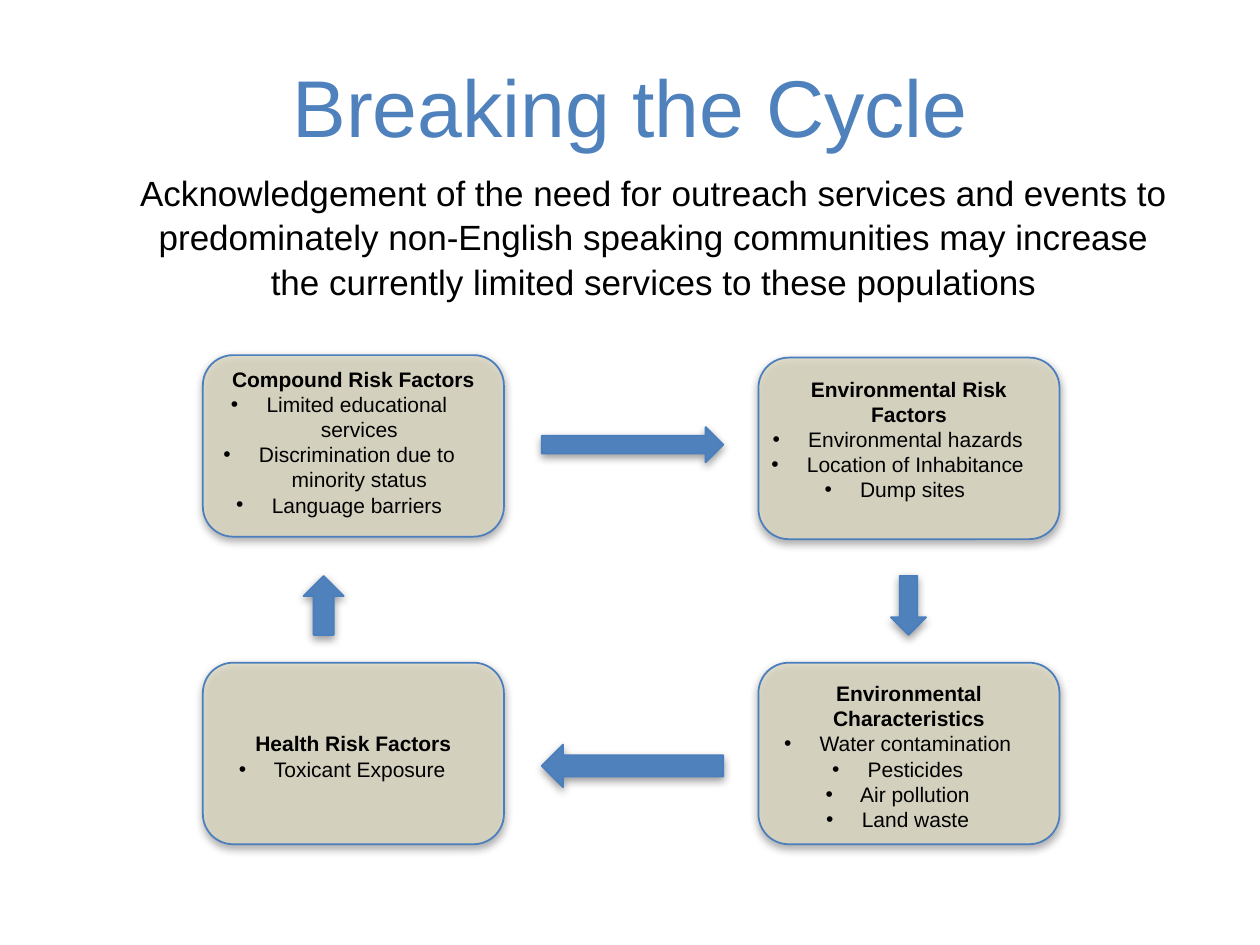
from lxml.etree import SubElement
from pptx import Presentation
from pptx.dml.color import RGBColor
from pptx.enum.shapes import MSO_SHAPE as Preset
from pptx.enum.text import MSO_ANCHOR as Anchor, PP_ALIGN as Align
from pptx.oxml.ns import qn
from pptx.util import Cm, Pt

color = RGBColor.from_string
BLUE, EDGE, SAND, BLACK = "4F81BD", "4B7EBC", "DDD9C3", "000000"


def add_text(left, top, width, height, anchor, lines):
    """Each line is (text, font values, kind); kind is plain, bullet or hanging."""
    frame = slide.shapes.add_textbox(Cm(left), Cm(top), Cm(width), Cm(height)).text_frame
    frame.word_wrap = True
    frame.vertical_anchor = anchor
    for index, (text, size, hue, bold, kind) in enumerate(lines):
        paragraph = frame.add_paragraph() if index else frame.paragraphs[0]
        paragraph.alignment = Align.CENTER
        run = paragraph.add_run()
        run.text = text
        run.font.color.rgb = color(hue)
        for name, value in {"name": "Arial", "size": Pt(size), "bold": bold}.items():
            setattr(run.font, name, value)
        properties = paragraph._p.get_or_add_pPr()
        if kind == "bullet":
            SubElement(properties, qn("a:buFont"), typeface="Arial")
            SubElement(properties, qn("a:buChar"), char="•")
        elif kind == "hanging":
            properties.set("marL", str(Cm(0.24)))
    return frame


def add_block(preset, left, top, width, height, fill, opacity=100):
    """Filled preset shape with a soft shadow straight below it."""
    shape = slide.shapes.add_shape(preset, Cm(left), Cm(top), Cm(width), Cm(height))
    shape.fill.solid()
    shape.fill.fore_color.rgb = color(fill)
    if opacity < 100:
        fill_color = shape._element.spPr.find(".//" + qn("a:srgbClr"))
        SubElement(fill_color, qn("a:alpha"), val=str(opacity * 1000))
    shape.line.color.rgb = color(EDGE)
    shape.line.width = Pt(1)
    shape.shadow.inherit = False
    effects = shape._element.spPr.find(qn("a:effectLst"))
    shadow = SubElement(effects, qn("a:outerShdw"), blurRad=str(Pt(5)), dist=str(Pt(2)),
                        dir="5400000", rotWithShape="0")
    shadow_color = SubElement(shadow, qn("a:srgbClr"), val=BLACK)
    SubElement(shadow_color, qn("a:alpha"), val="40000")


presentation = Presentation()
presentation.slide_width, presentation.slide_height = Cm(25.4), Cm(19.05)
slide = presentation.slides.add_slide(presentation.slide_layouts[6])

# Title and statement
add_text(1.52, 0.3, 22.36, 2.92, Anchor.BOTTOM,
         [("Breaking the Cycle", 46, BLUE, False, "plain")])
statement = add_text(1.52, 3.28, 22.36, 4.83, Anchor.TOP, [(
    "Acknowledgement of the need for outreach services and events to predominately "
    "non-English speaking communities may increase the currently limited services "
    "to these populations", 20, BLACK, False, "plain")])
statement.paragraphs[0].line_spacing = 1.06
statement.paragraphs[0]._p.get_or_add_pPr().set("marL", str(Cm(0.96)))

# Stages of the cycle: left, box top, text top, heading, lines
BOX_WIDTH, BOX_HEIGHT, TEXT_HEIGHT = 6.07, 3.66, 3.33
LEFT, RIGHT = 4.09, 15.29
stages = [
    (LEFT, 7.16, 7.24, "Compound Risk Factors", [
        ("Limited educational ", "bullet"), ("services", "hanging"),
        ("Discrimination due to ", "bullet"), ("minority status", "hanging"),
        ("Language barriers ", "bullet")]),
    (RIGHT, 7.21, 7.19, "Environmental Risk Factors", [
        ("Environmental hazards", "bullet"), ("Location of Inhabitance", "bullet"),
        ("Dump sites ", "bullet")]),
    (LEFT, 13.36, 13.58, "Health Risk Factors", [("Toxicant Exposure", "bullet")]),
    (RIGHT, 13.36, 13.58, "Environmental Characteristics", [
        ("Water contamination", "bullet"), ("Pesticides", "bullet"),
        ("Air pollution", "bullet"), ("Land waste", "bullet")]),
]
for left, box_top, text_top, heading, items in stages:
    add_block(Preset.ROUNDED_RECTANGLE, left, box_top, BOX_WIDTH, BOX_HEIGHT, SAND, 80)
    lines = [(heading, 12, BLACK, True, "plain")]
    for text, kind in items:
        lines.append((" " + text if kind == "bullet" else text, 12, BLACK, False, kind))
    add_text(left, text_top, BOX_WIDTH, TEXT_HEIGHT, Anchor.MIDDLE, lines)

# Arrows between the stages
for preset, left, top, width, height in [
    (Preset.RIGHT_ARROW, 10.92, 8.61, 3.66, 0.71),
    (Preset.DOWN_ARROW, 17.96, 11.61, 0.71, 1.19),
    (Preset.LEFT_ARROW, 10.92, 15.01, 3.66, 0.86),
    (Preset.UP_ARROW, 6.12, 11.61, 0.81, 1.19),
]:
    add_block(preset, left, top, width, height, BLUE)

presentation.save("out.pptx")
